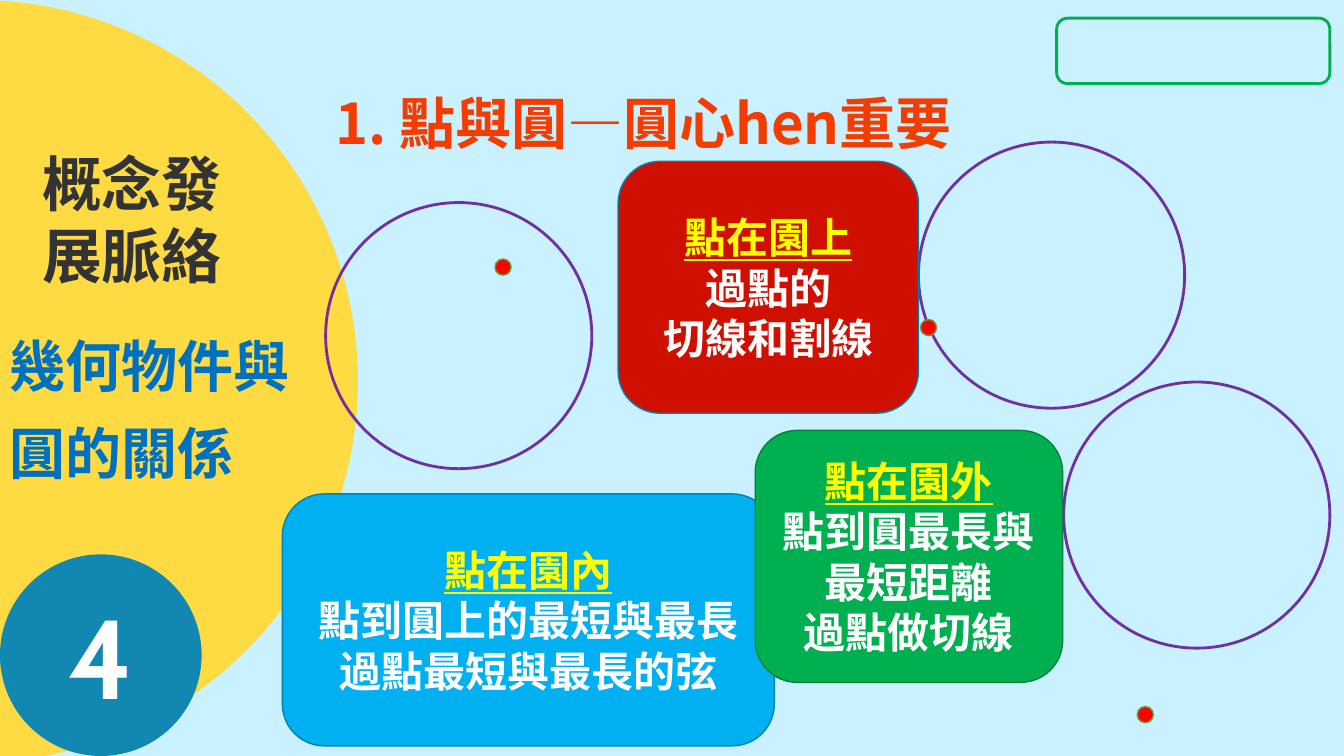
from dataclasses import dataclass

import pptx
import pptx.dml.color
import pptx.enum.shapes
import pptx.enum.text
import pptx.oxml
import pptx.oxml.ns
import pptx.util
from pptx.util import Inches

COLORS = {
    "sky": "C9F1FF", "sun": "FEDB43", "teal": "1187B1", "ink": "333333",
    "blue": "0070C0", "orange": "F23C00", "purple": "7030A0", "red": "FF0000",
    "moss": "6C9A3B", "yellow": "FFFF00", "white": "FFFFFF", "green": "00B050",
    "cyan": "00B0F0", "crimson": "CF1001", "cyan edge": "0082B2", "green edge": "00823B",
}
CJK_FONT = "Noto Sans CJK SC"
LATIN_FONT = "Cabin"
CIRCLE_SIZE = 2.64
POINT_SIZE = 0.16
CARD_HEIGHT = 2.5
Kind = pptx.enum.shapes.MSO_SHAPE
Align = pptx.enum.text.PP_ALIGN
Anchor = pptx.enum.text.MSO_ANCHOR


@dataclass
class Box:
    left: float
    top: float
    width: float
    height: float

    def lengths(self) -> tuple:
        return tuple(Inches(value) for value in (self.left, self.top, self.width, self.height))


@dataclass
class Card:
    box: Box
    fill: str
    line: str
    heading: str
    lines: tuple[str, ...]


@dataclass
class Label:
    box: Box
    text: str
    size: float
    color: str
    font: str
    line_spacing: float


CIRCLES = ((3.23, 2.01), (10.55, 3.79), (9.11, 1.41))
POINTS = ((4.91, 2.57), (9.13, 3.17), (11.28, 7.01))
CARDS = (
    Card(Box(2.8, 4.9, 4.88, CARD_HEIGHT), "cyan", "cyan edge", "點在園內",
         ("點到圓上的最短與最長", "過點最短與最長的弦")),
    Card(Box(6.13, 1.6, 2.98, CARD_HEIGHT), "crimson", "cyan edge", "點在園上",
         ("過點的", "切線和割線")),
    Card(Box(7.49, 4.27, 3.05, CARD_HEIGHT), "green", "green edge", "點在園外",
         ("點到圓最長與最短距離", "過點做切線")),
)
LABELS = (
    Label(Box(0.32, 1.41, 2.03, 1.54), "概念發展脈絡", 42.7, "ink", LATIN_FONT, 1.0),
    Label(Box(0, 3.04, 3.23, 1.85), "幾何物件與圓的關係", 40, "blue", CJK_FONT, 1.3),
)


def rgb(name: str) -> pptx.dml.color.RGBColor:
    return pptx.dml.color.RGBColor.from_string(COLORS[name])


def add_shape(slide, kind, box: Box, fill: str | None = None,
              line: str | None = None, line_width: float = 1):
    shape = slide.shapes.add_shape(kind, *box.lengths())
    shape.shadow.inherit = False
    if fill:
        shape.fill.solid()
        shape.fill.fore_color.rgb = rgb(fill)
    else:
        shape.fill.background()
    if line:
        shape.line.color.rgb = rgb(line)
        shape.line.width = pptx.util.Pt(line_width)
    else:
        shape.line.fill.background()
    shape.text_frame.vertical_anchor = Anchor.MIDDLE
    return shape


def format_paragraph(paragraph, size: float, color: str, font_name: str = CJK_FONT,
                     align=Align.CENTER) -> None:
    """Format the paragraph and give its runs the East Asian typeface."""
    paragraph.alignment = align
    font = paragraph.font
    font.name, font.size, font.bold = font_name, pptx.util.Pt(size), True
    font.color.rgb = rgb(color)
    for run in paragraph.runs:
        run._r.get_or_add_rPr().append(pptx.oxml.parse_xml(
            f'<a:ea {pptx.oxml.ns.nsdecls("a")} typeface="{CJK_FONT}"/>'))


def add_label(slide, label: Label) -> None:
    frame = slide.shapes.add_textbox(*label.box.lengths()).text_frame
    frame.word_wrap = True
    paragraph = frame.paragraphs[0]
    paragraph.text = label.text
    paragraph.line_spacing = label.line_spacing
    format_paragraph(paragraph, label.size, label.color, label.font, Align.LEFT)


def add_card(slide, card: Card) -> None:
    frame = add_shape(slide, Kind.ROUNDED_RECTANGLE, card.box, card.fill, card.line).text_frame
    frame.word_wrap = True
    frame.text = "\n".join((card.heading, *card.lines))
    for index, paragraph in enumerate(frame.paragraphs):
        format_paragraph(paragraph, 30, "white" if index else "yellow")
        paragraph.font.underline = index == 0


def set_title(slide) -> None:
    title = slide.shapes.title
    title.left, title.top, title.width, title.height = Box(3.23, 0.83, 7.83, 0.77).lengths()
    frame = title.text_frame
    frame.text = "1. 點與圓—圓心hen重要"
    frame.word_wrap = True
    frame.auto_size = pptx.enum.text.MSO_AUTO_SIZE.NONE
    frame.vertical_anchor = Anchor.TOP
    format_paragraph(frame.paragraphs[0], 40, "orange", align=Align.LEFT)


def main() -> None:
    presentation = pptx.Presentation()
    presentation.slide_width, presentation.slide_height = Inches(13.33), Inches(7.5)
    slide = presentation.slides.add_slide(presentation.slide_layouts[5])
    slide.background.fill.solid()
    slide.background.fill.fore_color.rgb = rgb("sky")

    set_title(slide)
    add_shape(slide, Kind.OVAL, Box(-4.01, 0, 7.56, 7.56), "sun")
    for label in LABELS:
        add_label(slide, label)
    number = add_shape(slide, Kind.OVAL, Box(0, 5.5, 2, 2), "teal")
    number.text_frame.text = "4"
    format_paragraph(number.text_frame.paragraphs[0], 80, "white", LATIN_FONT)
    add_shape(slide, Kind.ROUNDED_RECTANGLE, Box(10.48, 0.18, 2.71, 0.65),
              line="green", line_width=2)

    for left, top in CIRCLES:
        add_shape(slide, Kind.OVAL, Box(left, top, CIRCLE_SIZE, CIRCLE_SIZE),
                  line="purple", line_width=2)
    for left, top in POINTS:
        add_shape(slide, Kind.OVAL, Box(left, top, POINT_SIZE, POINT_SIZE), "red", "moss")
    for card in CARDS:
        add_card(slide, card)
    presentation.save("out.pptx")


if __name__ == "__main__":
    main()
